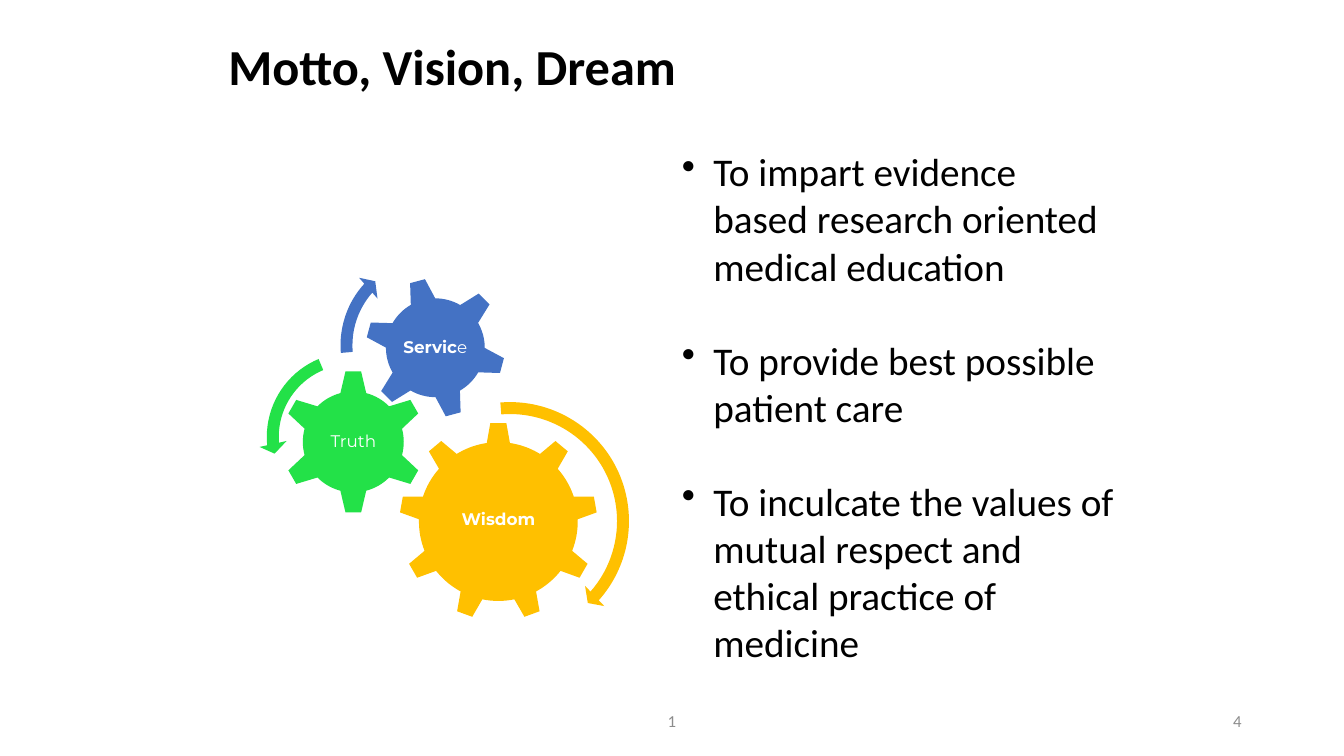
import dataclasses

import pptx
import pptx.dml.color
import pptx.enum.shapes
import pptx.enum.text
import pptx.oxml
import pptx.util

Pt = pptx.util.Pt
RGB = pptx.dml.color.RGBColor.from_string
SHAPE = pptx.enum.shapes.MSO_SHAPE
ALIGN = pptx.enum.text.PP_ALIGN
ANCHOR = pptx.enum.text.MSO_ANCHOR
BULLET = '<a:buChar xmlns:a="http://schemas.openxmlformats.org/drawingml/2006/main" char="•"/>'


@dataclasses.dataclass(frozen=True)
class Theme:
    """Colours, fonts and type sizes of the slide."""
    ink: str = "000000"
    muted: str = "8C8C8C"
    white: str = "FFFFFF"
    gold: str = "FFC000"
    green: str = "23E148"
    blue: str = "4472C4"
    text_font: str = "Calibri"
    gear_font: str = "Montserrat"
    title: float = 36
    body: float = 28
    small: float = 12


THEME = Theme()

GEARS = [
    dict(kind=SHAPE.GEAR_9_, color=THEME.gold, at=(100.1, 126.2), size=141.8, turn=0,
         runs=[("Wisdom", True)], label=(85, 72.7), lift=1.4,
         arrow=SHAPE.CIRCULAR_ARROW, arrow_at=(88.6, 106), arrow_size=181.4,
         bend=(0.047, 2.99, 24.892, 159.206, 0.055))
    if hasattr(SHAPE, "GEAR_9_") else
    dict(kind=SHAPE.GEAR_9, color=THEME.gold, at=(100.1, 126.2), size=141.8, turn=0,
         runs=[("Wisdom", True)], label=(85, 72.7), lift=1.4,
         arrow=SHAPE.CIRCULAR_ARROW, arrow_at=(88.6, 106), arrow_size=181.4,
         bend=(0.047, 2.99, 24.892, 159.206, 0.055)),
][:0] + [
    dict(kind=SHAPE.GEAR_9, color=THEME.gold, at=(100.1, 126.2), size=141.8, turn=0,
         runs=[("Wisdom", True)], label=(85, 72.7), lift=1.4,
         arrow=SHAPE.CIRCULAR_ARROW, arrow_at=(88.6, 106), arrow_size=181.4,
         bend=(0.047, 2.99, 24.892, 159.206, 0.055)),
    dict(kind=SHAPE.GEAR_6, color=THEME.green, at=(15.9, 88.7), size=103, turn=0,
         runs=[("Truth", False)], label=(51.1, 51.1), lift=0,
         arrow=SHAPE.LEFT_CIRCULAR_ARROW, arrow_at=(0, 70.7), arrow_size=131.8,
         bend=(0.065, 4.3, 104.891, 148.378, 0.075)),
    dict(kind=SHAPE.GEAR_6, color=THEME.blue, at=(75.6, 22.5), size=100.8, turn=345,
         runs=[("Servic", True), ("e", False)], label=(56.9, 56.9), lift=0,
         arrow=SHAPE.CIRCULAR_ARROW, arrow_at=(52.6, 0.2), arrow_size=141.8,
         bend=(0.06, 3.941, 133.138, 105.082, 0.07)),
]
GOALS = [
    "To impart evidence based research oriented medical education",
    "To provide best possible patient care",
    "To inculcate the values of mutual respect and ethical practice of medicine",
]


def add_text(shapes, box, paragraphs, size, font=THEME.text_font, color=THEME.ink,
             align=ALIGN.LEFT, anchor=ANCHOR.MIDDLE, spacing=None, inset=None, gap=0, hang=0):
    """Add a text box of paragraphs, each a list of (text, bold) runs."""
    tf = shapes.add_textbox(*map(Pt, box)).text_frame
    tf.word_wrap = True
    tf.vertical_anchor = anchor
    if inset is not None:
        tf.margin_left = tf.margin_right = tf.margin_top = tf.margin_bottom = Pt(inset)
    for i, runs in enumerate(paragraphs):
        p = tf.add_paragraph() if i else tf.paragraphs[0]
        p.alignment = align
        if spacing:
            p.line_spacing = spacing
        if i and gap:
            p.space_before = Pt(gap)
        if hang:
            pPr = p._p.get_or_add_pPr()
            pPr.set("marL", str(Pt(hang)))
            pPr.set("indent", str(-Pt(hang)))
            pPr.append(pptx.oxml.parse_xml(BULLET))
        for text, bold in runs:
            r = p.add_run()
            r.text = text
            r.font.name, r.font.size, r.font.bold = font, Pt(size), bold
            r.font.color.rgb = RGB(color)


def add_solid(shapes, kind, box, color):
    """Add a plain filled preset shape without outline."""
    sp = shapes.add_shape(kind, *map(Pt, box))
    sp.shadow.inherit = False
    sp.fill.solid()
    sp.fill.fore_color.rgb = RGB(color)
    sp.line.fill.background()
    return sp


def add_gears(s, box):
    """Place the labelled gears and their turning arrows from the box corner."""
    left, top = box[:2]
    shapes = s.shapes.add_group_shape().shapes
    for gear in GEARS:
        x, y, size = left + gear["at"][0], top + gear["at"][1], gear["size"]
        sp = add_solid(shapes, gear["kind"], (x, y, size, size), gear["color"])
        sp.rotation = gear["turn"]
        w, h = gear["label"]
        label_box = (x + (size - w) / 2, y + (size - h) / 2 - gear["lift"], w, h)
        add_text(shapes, label_box, [gear["runs"]], THEME.small, font=THEME.gear_font,
                 color=THEME.white, align=ALIGN.CENTER, spacing=0.9, inset=1.2)
    for gear in GEARS:
        x, y = gear["arrow_at"]
        size = gear["arrow_size"]
        sp = add_solid(shapes, gear["arrow"], (left + x, top + y, size, size), gear["color"])
        for i, value in enumerate(gear["bend"]):
            sp.adjustments[i] = value


def add_title(s, box):
    """Place the slide title."""
    add_text(s.shapes, box, [[("Motto, Vision, Dream", True)]], THEME.title, spacing=0.9)


def add_goals(s, box):
    """Place the bulleted goals."""
    add_text(s.shapes, box, [[(goal, False)] for goal in GOALS], THEME.body,
             anchor=ANCHOR.TOP, gap=33.6, hang=22.5)


def add_footer(s, box):
    """Place the centred footer and the page number at the right of the box."""
    left, top, width, height = box
    add_text(s.shapes, (left, top, 324, height), [[("1", False)]], THEME.small,
             color=THEME.muted, align=ALIGN.CENTER)
    add_text(s.shapes, (left + width - 216, top, 216, height), [[("4", False)]], THEME.small,
             color=THEME.muted, align=ALIGN.RIGHT)


def main():
    """Build and save the slide."""
    prs = pptx.Presentation()
    prs.slide_width, prs.slide_height = Pt(960), Pt(540)
    s = prs.slides.add_slide(prs.slide_layouts[6])
    add_title(s, (156, 21.6, 648, 56.4))
    add_gears(s, (185, 175.5, 270, 288))
    add_goals(s, (480, 102, 324, 415))
    add_footer(s, (318, 500.5, 576, 28.8))
    prs.save("out.pptx")


if __name__ == "__main__":
    main()
